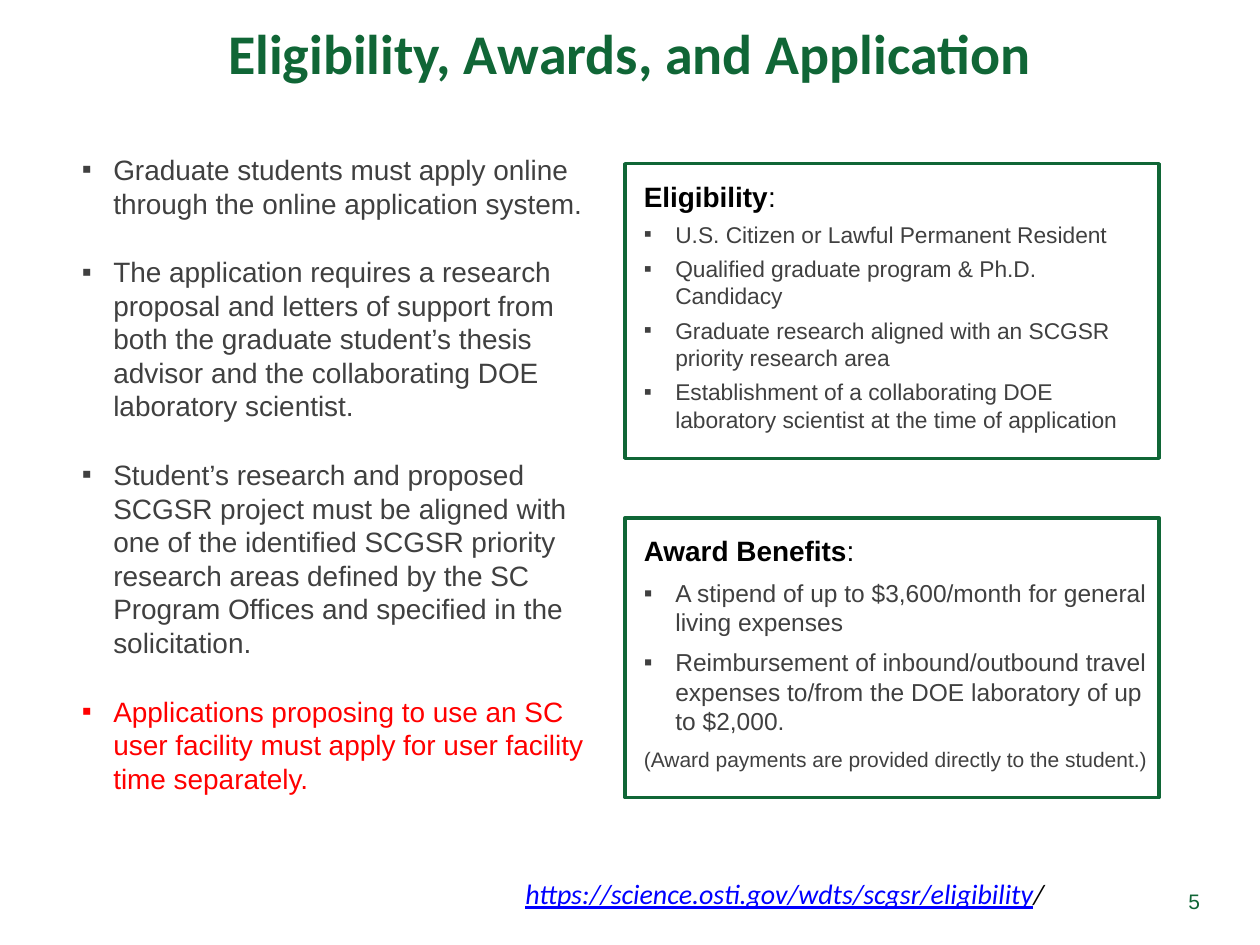
import pptx
import pptx.util
import pptx.dml.color
import pptx.enum.shapes
import pptx.enum.text
from dataclasses import dataclass
from lxml import etree
from pptx.util import Cm


@dataclass
class Theme:
    green: str = "106636"
    gray: str = "404040"
    black: str = "000000"
    red: str = "FF0000"
    blue: str = "0000FF"
    head: str = "Calibri"
    body: str = "Arial"
    title: int = 32
    large: int = 16
    mid: int = 14
    fine: int = 13
    small: int = 12


theme = Theme()


def style(run, size, color, face=theme.body, bold=False):
    run.font.size = pptx.util.Pt(size)
    run.font.name = face
    run.font.bold = bold
    run.font.color.rgb = pptx.dml.color.RGBColor.from_string(color)


def bullet(para):
    props = para._p.get_or_add_pPr()
    props.set("marL", str(Cm(0.635)))
    props.set("indent", str(-Cm(0.635)))
    for tag, key, val in (("buFont", "typeface", theme.body), ("buChar", "char", "▪")):
        etree.SubElement(props, pptx.oxml.ns.qn("a:" + tag)).set(key, val)


deck = pptx.Presentation()
deck.slide_width = Cm(25.4)
deck.slide_height = Cm(19.05)
slide = deck.slides.add_slide(deck.slide_layouts[5])
shapes = slide.shapes

title = shapes.title
title.left, title.top, title.width, title.height = Cm(0), Cm(0), Cm(25.4), Cm(2.11)
title.text_frame.text = "Eligibility, Awards, and Application"
title.text_frame.vertical_anchor = pptx.enum.text.MSO_ANCHOR.MIDDLE
para = title.text_frame.paragraphs[0]
para.alignment = pptx.enum.text.PP_ALIGN.CENTER
style(para.runs[0], theme.title, theme.green, theme.head, True)

steps = [
    ("Graduate students must apply online through the online application system.", theme.gray),
    ("The application requires a research proposal and letters of support from both the graduate student’s thesis advisor and the collaborating DOE laboratory scientist.", theme.gray),
    ("Student’s research and proposed SCGSR project must be aligned with one of the identified SCGSR priority research areas defined by the SC Program Offices and specified in the solicitation.", theme.gray),
    ("Applications proposing to use an SC user facility must apply for user facility time separately.", theme.red),
]
frame = shapes.add_textbox(Cm(1.4), Cm(2.95), Cm(11.05), Cm(13.79)).text_frame
frame.word_wrap = True
for num, (text, color) in enumerate(steps):
    para = frame.add_paragraph() if num else frame.paragraphs[0]
    para.text = text
    bullet(para)
    if num:
        para.space_before = pptx.util.Pt(20)
    style(para.runs[0], theme.large, color)

cards = [
    ("Eligibility", 3.3, 5.94, 10.64, 4, theme.fine, [
        "U.S. Citizen or Lawful Permanent Resident",
        "Qualified graduate program & Ph.D. Candidacy",
        "Graduate research aligned with an SCGSR priority research area",
        "Establishment of a collaborating DOE laboratory scientist at the time of application",
    ], ""),
    ("Award Benefits", 10.44, 5.64, 10.82, 6, theme.mid, [
        "A stipend of up to $3,600/month for general living expenses",
        "Reimbursement of inbound/outbound travel expenses to/from the DOE laboratory of up to $2,000.",
    ], "(Award payments are provided directly to the student.)"),
]
for name, top, height, width, gap, size, items, note in cards:
    card = shapes.add_shape(pptx.enum.shapes.MSO_SHAPE.RECTANGLE, Cm(12.6), Cm(top), Cm(10.77), Cm(height))
    card.shadow.inherit = False
    card.fill.background()
    card.line.color.rgb = pptx.dml.color.RGBColor.from_string(theme.green)
    card.line.width = pptx.util.Pt(2)
    frame = shapes.add_textbox(Cm(12.73), Cm(top + 0.2), Cm(width), Cm(height - 0.5)).text_frame
    frame.word_wrap = True
    para = frame.paragraphs[0]
    for text, bold in ((name, True), (":", False)):
        run = para.add_run()
        run.text = text
        style(run, theme.large, theme.black, bold=bold)
    for text in items:
        para = frame.add_paragraph()
        para.text = text
        bullet(para)
        style(para.runs[0], size, theme.gray)
    if note:
        para = frame.add_paragraph()
        para.text = note
        style(para.runs[0], theme.small, theme.gray)
    for para in frame.paragraphs:
        para.space_after = pptx.util.Pt(gap)

frame = shapes.add_textbox(Cm(10.34), Cm(17.55), Cm(11.13), Cm(0.95)).text_frame
frame.word_wrap = False
para = frame.paragraphs[0]
for text, color, line in (
    ("https://science.osti.gov/wdts/scgsr/eligibility", theme.blue, True),
    ("/", theme.black, False),
):
    run = para.add_run()
    run.text = text
    style(run, theme.large, color, theme.head)
    run.font.italic = True
    run.font.underline = line

frame = shapes.add_textbox(Cm(23.37), Cm(17.65), Cm(1.07), Cm(1.02)).text_frame
frame.word_wrap = True
frame.vertical_anchor = pptx.enum.text.MSO_ANCHOR.MIDDLE
frame.text = "5"
para = frame.paragraphs[0]
para.alignment = pptx.enum.text.PP_ALIGN.RIGHT
style(para.runs[0], theme.small, theme.green)

deck.save("out.pptx")
